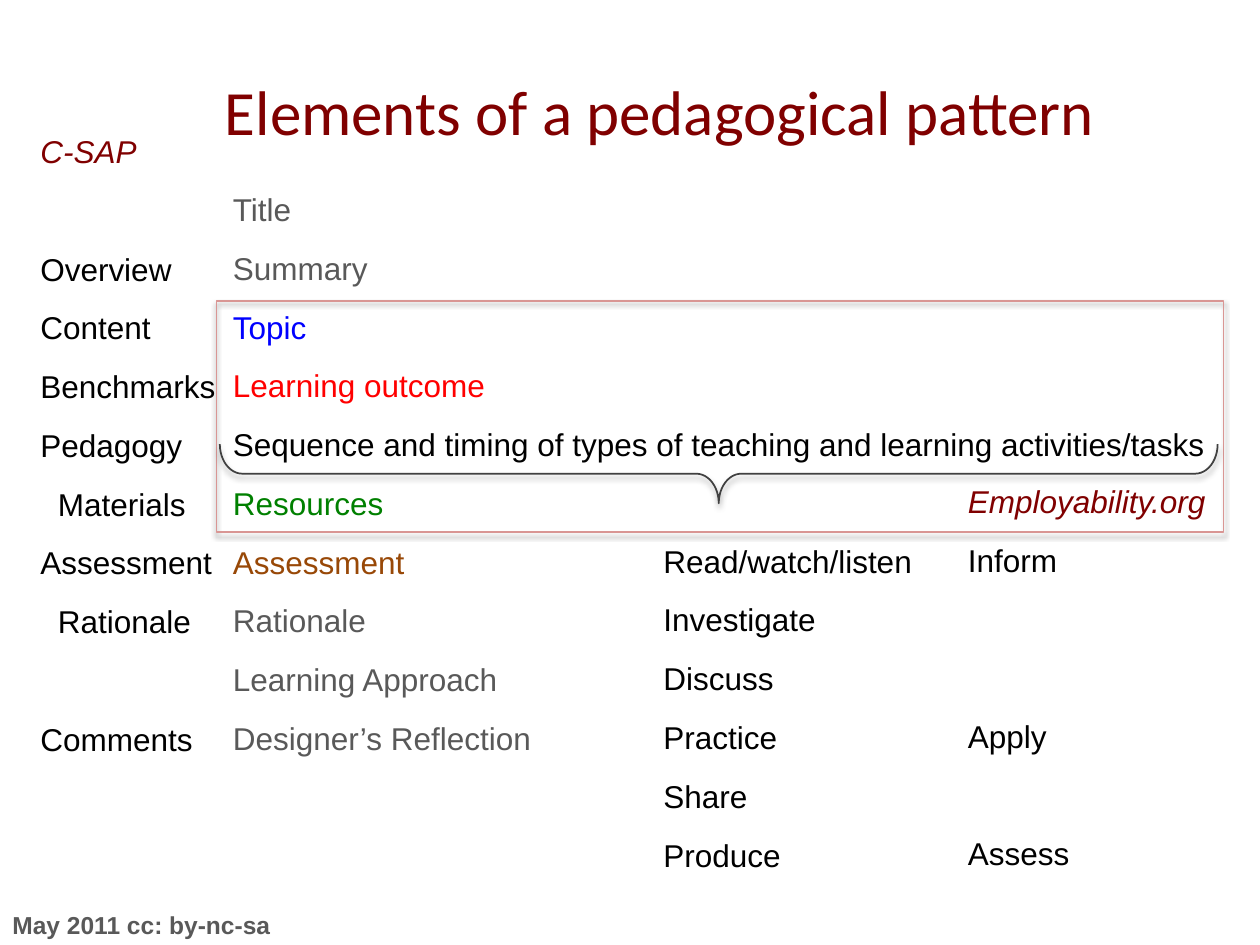
from lxml import etree
from pptx import Presentation
from pptx.dml.color import RGBColor
from pptx.enum.shapes import MSO_SHAPE
from pptx.enum.text import MSO_ANCHOR, PP_ALIGN
from pptx.oxml.ns import qn
from pptx.util import Pt

RECTANGLE = MSO_SHAPE.RECTANGLE
RIGHT_BRACE = MSO_SHAPE.RIGHT_BRACE
LEFT, CENTER = PP_ALIGN.LEFT, PP_ALIGN.CENTER
TOP, MIDDLE = MSO_ANCHOR.TOP, MSO_ANCHOR.MIDDLE

BLACK = RGBColor(0, 0, 0)
GRAY = RGBColor(0x59, 0x59, 0x59)
DARK_GRAY = RGBColor(0x40, 0x40, 0x40)
MAROON = RGBColor(0x80, 0, 0)
BLUE = RGBColor(0, 0, 0xFF)
RED = RGBColor(0xFF, 0, 0)
GREEN = RGBColor(0, 0x80, 0)
BROWN = RGBColor(0x98, 0x48, 0x07)
PINK = RGBColor(0xD9, 0x96, 0x94)

ROW_GAP = 12
ROW_PITCH = 33.5
INDENT = 10


def add_text_frame(slide, left, top, width, height, anchor=TOP, wrap=True):
    box = slide.shapes.add_textbox(Pt(left), Pt(top), Pt(width), Pt(height))
    frame = box.text_frame
    frame.word_wrap = wrap
    frame.vertical_anchor = anchor
    return frame


def write_text(paragraph, text, size=18, font="Arial", color=BLACK, bold=False,
               italic=False, align=LEFT, after=0, skip=0, indent=0):
    paragraph.alignment = align
    paragraph.space_after = Pt(after)
    if skip:
        paragraph.space_before = Pt(skip * ROW_PITCH)
    if indent:
        paragraph._p.get_or_add_pPr().set("marL", str(Pt(indent)))
    run = paragraph.add_run()
    run.text = text
    run.font.size = Pt(size)
    run.font.name = font
    run.font.color.rgb = color
    run.font.bold = bold
    run.font.italic = italic


def add_column(slide, left, top, width, height, rows, wrap=True):
    frame = add_text_frame(slide, left, top, width, height, wrap=wrap)
    for index, (text, style) in enumerate(rows):
        paragraph = frame.add_paragraph() if index else frame.paragraphs[0]
        write_text(paragraph, text, after=ROW_GAP, **style)


def add_outline(slide, kind, left, top, width, height, color, weight, opacity):
    shape = slide.shapes.add_shape(kind, Pt(left), Pt(top), Pt(width), Pt(height))
    shape.fill.background()
    shape.line.color.rgb = color
    shape.line.width = Pt(weight)
    shape.shadow.inherit = False
    effects = shape._element.spPr.find(qn("a:effectLst"))
    shadow = etree.SubElement(effects, qn("a:outerShdw"), blurRad=str(Pt(3.1)),
                              dist=str(Pt(1.8)), dir="5400000", rotWithShape="0")
    shadow_color = etree.SubElement(shadow, qn("a:srgbClr"), val=str(BLACK))
    etree.SubElement(shadow_color, qn("a:alpha"), val=str(opacity * 1000))
    return shape


def main():
    presentation = Presentation()
    presentation.slide_width = Pt(720)
    presentation.slide_height = Pt(540)
    slide = presentation.slides.add_slide(presentation.slide_layouts[6])

    footer = add_text_frame(slide, 0, 516.2, 204, 24)
    write_text(footer.paragraphs[0], "May 2011 cc: by-nc-sa", size=14, color=GRAY, bold=True)
    title = add_text_frame(slide, 78, 18, 606, 90, anchor=MIDDLE)
    write_text(title.paragraphs[0], "Elements of a pedagogical pattern ", size=36,
               font="Calibri", color=MAROON, align=CENTER)

    add_column(slide, 126, 105, 576, 334, [
        ("Title", {"color": GRAY}),
        ("Summary", {"color": GRAY}),
        ("Topic", {"color": BLUE}),
        ("Learning outcome", {"color": RED}),
        ("Sequence and timing of types of teaching and learning activities/tasks", {}),
        ("Resources", {"color": GREEN}),
        ("Assessment", {"color": BROWN}),
        ("Rationale", {"color": GRAY}),
        ("Learning Approach", {"color": GRAY}),
        ("Designer’s Reflection", {"color": GRAY}),
    ])
    add_outline(slide, RECTANGLE, 123.8, 172, 575.3, 132, PINK, 0.75, 35)
    activities = ["Read/watch/listen", "Investigate", "Discuss", "Practice", "Share", "Produce"]
    add_column(slide, 372, 306, 158, 199, [(name, {}) for name in activities], wrap=False)
    add_column(slide, 546, 272, 156, 232.5, [
        ("Employability.org", {"color": MAROON, "italic": True}),
        ("Inform", {}),
        ("Apply", {"skip": 2}),
        ("Assess", {"skip": 1}),
    ], wrap=False)
    add_column(slide, 16, 72, 128, 368.5, [
        ("C-SAP", {"color": MAROON, "italic": True}),
        ("Overview", {"skip": 1}),
        ("Content", {}),
        ("Benchmarks", {}),
        ("Pedagogy", {}),
        ("Materials", {"indent": INDENT}),
        ("Assessment", {}),
        ("Rationale", {"indent": INDENT}),
        ("Comments", {"skip": 1}),
    ])
    brace = add_outline(slide, RIGHT_BRACE, 393.8, -14.4, 33.8, 570.2, DARK_GRAY, 1, 38)
    brace.rotation = 90
    brace.adjustments[0] = 0.38
    brace.adjustments[1] = 0.5

    presentation.save("out.pptx")


if __name__ == "__main__":
    main()
